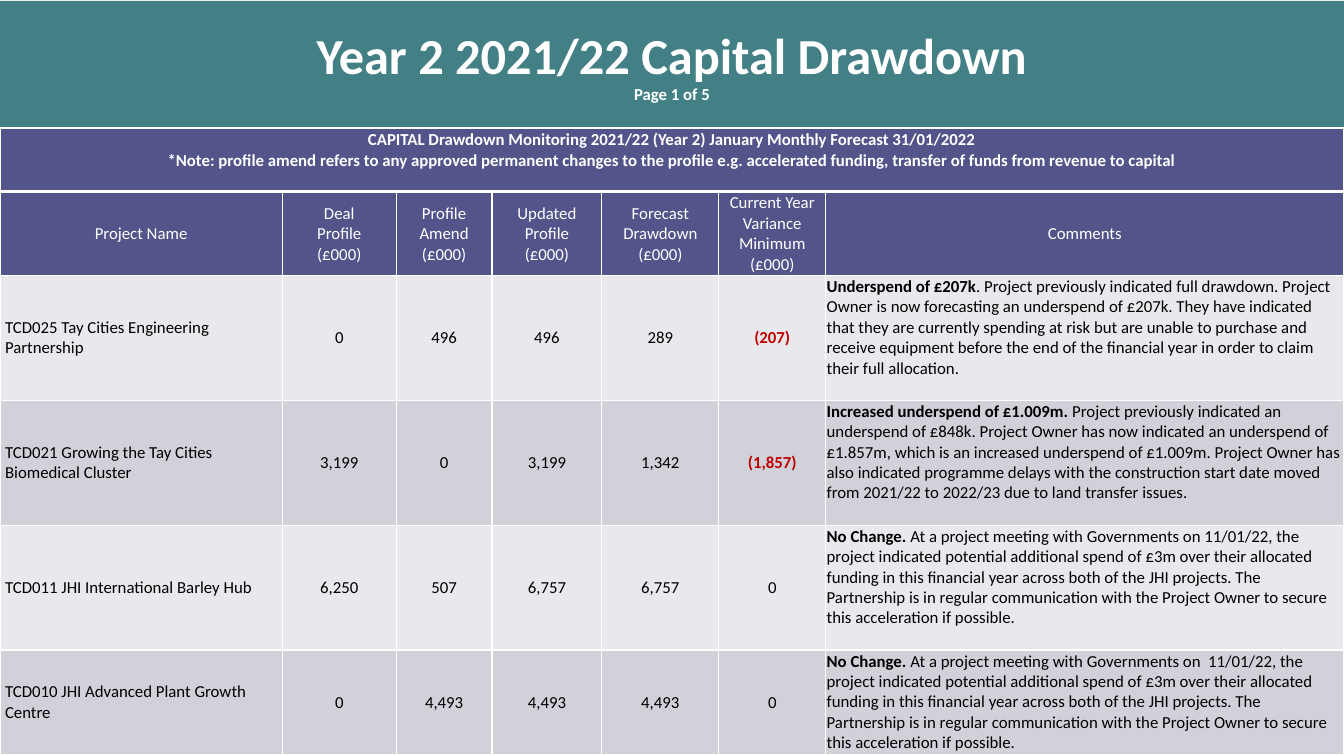
from dataclasses import dataclass

import lxml.etree
import pptx
import pptx.dml.color
import pptx.enum.shapes
import pptx.enum.text
import pptx.oxml.ns
import pptx.util

RGBColor = pptx.dml.color.RGBColor
WHITE = RGBColor(0xFF, 0xFF, 0xFF)
BLACK = RGBColor(0x00, 0x00, 0x00)
TEAL = RGBColor(0x43, 0x80, 0x86)
INDIGO = RGBColor(0x53, 0x54, 0x8A)
RED = RGBColor(0xC0, 0x00, 0x00)
BANDS = (RGBColor(0xE9, 0xE9, 0xED), RGBColor(0xD1, 0xD1, 0xDA))

EMU_PER_PX = 9144  # 100 px to the inch
SLIDE_WIDTH, SLIDE_HEIGHT = 1333, 750
COLUMN_WIDTHS = (280, 113, 95, 109, 116, 106, 514)
ROW_HEIGHTS = (63, 83, 124, 124, 124, 104)
VARIANCE_COLUMN = 5

CENTER = pptx.enum.text.PP_ALIGN.CENTER
LEFT = pptx.enum.text.PP_ALIGN.LEFT
MIDDLE = pptx.enum.text.MSO_ANCHOR.MIDDLE
TOP = pptx.enum.text.MSO_ANCHOR.TOP


@dataclass(frozen=True)
class Span:
    text: str
    bold: bool = False
    color: RGBColor = BLACK
    size: int = 12


@dataclass(frozen=True)
class CellStyle:
    fill: RGBColor
    align: int = CENTER
    anchor: int = MIDDLE
    margins: tuple[int, int, int, int] = (1, 1, 1, 0)  # left, top, right, bottom
    top_line: int = 1
    bottom_line: int = 1


@dataclass(frozen=True)
class Project:
    name: str
    figures: tuple[str, str, str, str]
    variance: str
    status: str
    comment: str


BANNER = (
    "CAPITAL Drawdown Monitoring 2021/22 (Year 2) January Monthly Forecast 31/01/2022",
    "*Note: profile amend refers to any approved permanent changes to the profile "
    "e.g. accelerated funding, transfer of funds from revenue to capital",
)
HEADINGS = (
    ("Project Name",),
    ("Deal", "Profile", "(£000)"),
    ("Profile", "Amend", "(£000)"),
    ("Updated", "Profile", "(£000)"),
    ("Forecast", "Drawdown", "(£000)"),
    ("Current Year Variance Minimum", "(£000)"),
    ("Comments",),
)
ACCELERATION = (
    "11/01/22, the project indicated potential additional spend of £3m over their allocated "
    "funding in this financial year across both of the JHI projects. The Partnership is in "
    "regular communication with the Project Owner to secure this acceleration if possible."
)
PROJECTS = (
    Project(
        "TCD025 Tay Cities Engineering Partnership", ("0", "496", "496", "289"), "(207)",
        "Underspend of £207k",
        ". Project previously indicated full drawdown. Project Owner is now forecasting an "
        "underspend of £207k. They have indicated that they are currently spending at risk but "
        "are unable to purchase and receive equipment before the end of the financial year in "
        "order to claim their full allocation.",
    ),
    Project(
        "TCD021 Growing the Tay Cities Biomedical Cluster", ("3,199", "0", "3,199", "1,342"),
        "(1,857)", "Increased underspend of £1.009m. ",
        "Project previously indicated an underspend of £848k. Project Owner has now indicated "
        "an underspend of £1.857m, which is an increased underspend of £1.009m. Project Owner "
        "has also indicated programme delays with the construction start date moved from "
        "2021/22 to 2022/23 due to land transfer issues.",
    ),
    Project(
        "TCD011 JHI International Barley Hub", ("6,250", "507", "6,757", "6,757"), "0",
        "No Change.", " At a project meeting with Governments on " + ACCELERATION,
    ),
    Project(
        "TCD010 JHI Advanced Plant Growth Centre", ("0", "4,493", "4,493", "4,493"), "0",
        "No Change.", " At a project meeting with Governments on  " + ACCELERATION,
    ),
)


def px(length: int) -> pptx.util.Emu:
    return pptx.util.Emu(length * EMU_PER_PX)


def set_all(target: object, values: dict[str, object]) -> None:
    for name, value in values.items():
        setattr(target, name, value)


def add_span(para, span: Span) -> None:
    run = para.add_run()
    run.text = span.text
    set_all(run.font, {"name": "Calibri", "size": pptx.util.Pt(span.size), "bold": span.bold})
    run.font.color.rgb = span.color


def set_borders(cell, style: CellStyle) -> None:
    properties = cell._tc.get_or_add_tcPr()
    widths = {"lnL": 1, "lnR": 1, "lnT": style.top_line, "lnB": style.bottom_line}
    for index, (tag, width) in enumerate(widths.items()):
        line = lxml.etree.Element(pptx.oxml.ns.qn(f"a:{tag}"), w=str(pptx.util.Pt(width)))
        fill = lxml.etree.SubElement(line, pptx.oxml.ns.qn("a:solidFill"))
        lxml.etree.SubElement(fill, pptx.oxml.ns.qn("a:srgbClr"), val=str(WHITE))
        properties.insert(index, line)


def fill_cell(cell, paragraphs: list[list[Span]], style: CellStyle) -> None:
    cell.fill.solid()
    cell.fill.fore_color.rgb = style.fill
    sides = ("margin_left", "margin_top", "margin_right", "margin_bottom")
    set_all(cell, dict(zip(sides, map(px, style.margins))))
    cell.vertical_anchor = style.anchor
    set_borders(cell, style)
    for index, spans in enumerate(paragraphs):
        frame = cell.text_frame
        para = frame.add_paragraph() if index else frame.paragraphs[0]
        para.alignment = style.align
        for span in spans:
            add_span(para, span)


def add_title(page) -> None:
    box = page.shapes.add_shape(
        pptx.enum.shapes.MSO_SHAPE.RECTANGLE, px(0), px(1), px(SLIDE_WIDTH), px(125))
    box.shadow.inherit = False
    box.fill.solid()
    box.fill.fore_color.rgb = TEAL
    box.line.fill.background()
    set_all(box.text_frame, {"word_wrap": True, "vertical_anchor": MIDDLE})
    para = box.text_frame.paragraphs[0]
    para.alignment = CENTER
    add_span(para, Span("Year 2 2021/22 Capital Drawdown", True, WHITE, 36))
    para.add_line_break()
    add_span(para, Span("Page 1 of 5", True, WHITE))


def add_project(table, row: int, project: Project) -> None:
    band = BANDS[row % 2]
    padded = (5, 5, 5, 5)
    fill_cell(table.cell(row, 0), [[Span(project.name)]],
              CellStyle(band, align=LEFT, margins=padded))
    for column, figure in enumerate(project.figures, start=1):
        fill_cell(table.cell(row, column), [[Span(figure)]], CellStyle(band))
    negative = project.variance.startswith("(")
    variance = Span(project.variance, negative, RED if negative else BLACK)
    fill_cell(table.cell(row, VARIANCE_COLUMN), [[variance]], CellStyle(band, margins=padded))
    fill_cell(table.cell(row, VARIANCE_COLUMN + 1),
              [[Span(project.status, True), Span(project.comment)]],
              CellStyle(band, align=LEFT, anchor=TOP))


def add_drawdown_table(page) -> None:
    table = page.shapes.add_table(
        len(ROW_HEIGHTS), len(COLUMN_WIDTHS), px(0), px(127),
        px(SLIDE_WIDTH), px(sum(ROW_HEIGHTS))).table
    set_all(table, {"first_row": False, "horz_banding": False})
    for column, width in zip(table.columns, COLUMN_WIDTHS):
        column.width = px(width)
    for row, height in zip(table.rows, ROW_HEIGHTS):
        row.height = px(height)

    # Banner across all columns
    table.cell(0, 0).merge(table.cell(0, len(COLUMN_WIDTHS) - 1))
    banner_style = CellStyle(INDIGO, margins=(1, 1, 1, 20), bottom_line=3)
    fill_cell(table.cell(0, 0), [[Span(line, True, WHITE)] for line in BANNER], banner_style)

    # Column headings
    for column, lines in enumerate(HEADINGS):
        fill_cell(table.cell(1, column), [[Span(line, color=WHITE)] for line in lines],
                  CellStyle(INDIGO, top_line=3))

    # Project rows
    for row, project in enumerate(PROJECTS, start=2):
        add_project(table, row, project)


def main() -> None:
    deck = pptx.Presentation()
    set_all(deck, {"slide_width": px(SLIDE_WIDTH), "slide_height": px(SLIDE_HEIGHT)})
    page = deck.slides.add_slide(deck.slide_layouts[6])
    add_title(page)
    add_drawdown_table(page)
    deck.save("out.pptx")


if __name__ == "__main__":
    main()
